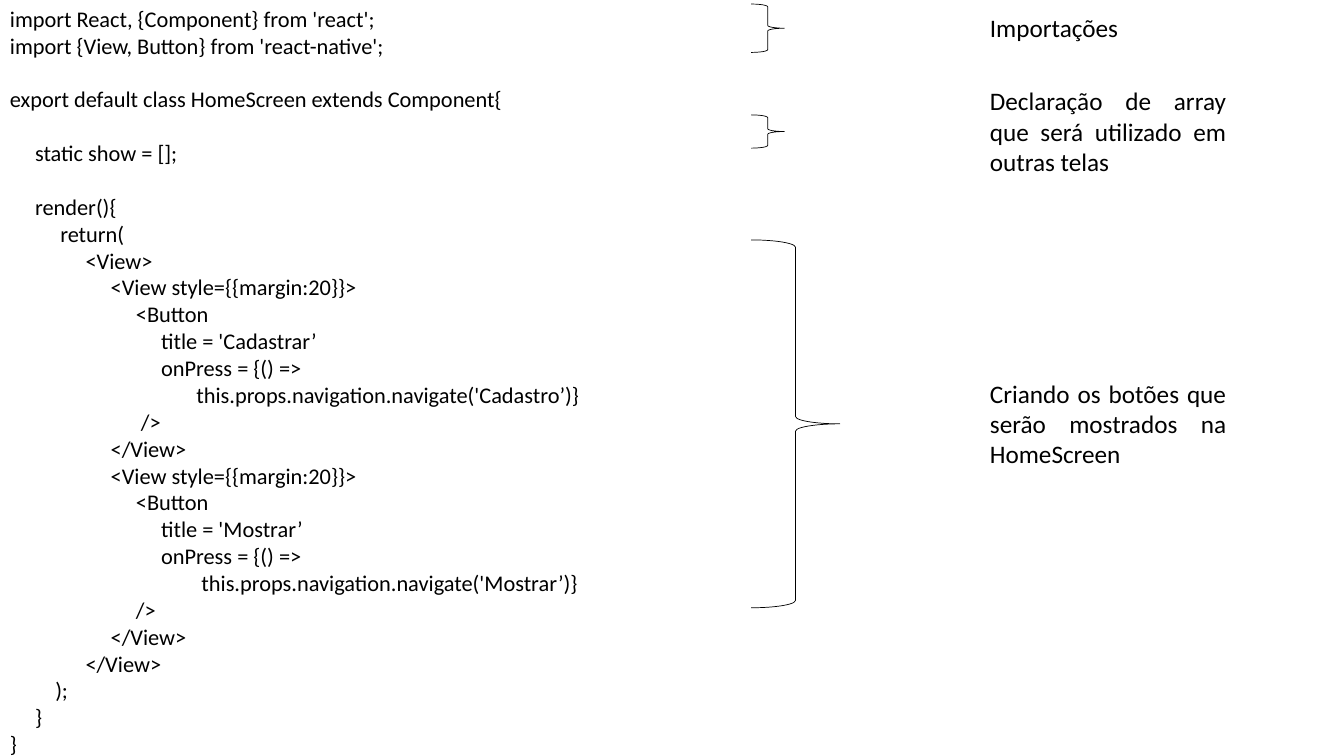
from dataclasses import dataclass

from pptx import Presentation
from pptx.dml.color import RGBColor
from pptx.enum.shapes import MSO_SHAPE
from pptx.enum.text import MSO_AUTO_SIZE, PP_ALIGN
from pptx.util import Inches, Pt


@dataclass(frozen=True)
class Theme:
    font: str = "Calibri"
    ink: RGBColor = RGBColor(0, 0, 0)
    code_size: int = 16
    note_size: int = 18
    line_width: float = 0.5
    indent: float = 0.25      # inches per code level
    blank_line: float = 19.2  # points


THEME = Theme()

# Indent level, code, whether a line's height is left above
CODE = [
    (0, "import React, {Component} from 'react';", False),
    (0, "import {View, Button} from 'react-native';", False),
    (0, "export default class HomeScreen extends Component{", True),
    (1, "static show = [];", True),
    (1, "render(){", True),
    (2, "return(", False),
    (3, "<View>", False),
    (4, "<View style={{margin:20}}>", False),
    (5, "<Button", False),
    (6, "title = 'Cadastrar’", False),
    (6, "onPress = {() =>", False),
    (7.4, "this.props.navigation.navigate('Cadastro’)}", False),
    (5.2, "/>", False),
    (4, "</View>", False),
    (4, "<View style={{margin:20}}>", False),
    (5, "<Button", False),
    (6, "title = 'Mostrar’", False),
    (6, "onPress = {() =>", False),
    (7.6, "this.props.navigation.navigate('Mostrar’)}", False),
    (5, "/>", False),
    (4, "</View>", False),
    (3, "</View>", False),
    (1.8, ");", False),
    (1, "}", False),
    (0, "}", False),
]

# Brace top, width, height; note top, height, alignment, text
NOTES = [
    ((0.04, 0.33, 0.48), (0.07, 0.4), PP_ALIGN.LEFT, "Importações"),
    ((1.14, 0.33, 0.33), (0.8, 1.01), PP_ALIGN.JUSTIFY,
     "Declaração de array que será utilizado em outras telas"),
    ((2.38, 0.88, 3.65), (3.7, 1.01), PP_ALIGN.JUSTIFY,
     "Criando os botões que serão mostrados na HomeScreen"),
]


def add_frame(slide, left, top, width, height):
    box = slide.shapes.add_textbox(*map(Inches, (left, top, width, height)))
    tf = box.text_frame
    for name, value in {"word_wrap": True,
                        "auto_size": MSO_AUTO_SIZE.SHAPE_TO_FIT_TEXT}.items():
        setattr(tf, name, value)
    return tf


def write(p, text, size):
    r = p.add_run()
    r.text = text
    for name, value in {"name": THEME.font, "size": Pt(size)}.items():
        setattr(r.font, name, value)
    r.font.color.rgb = THEME.ink


def add_code(slide, left, top, width, height):
    tf = add_frame(slide, left, top, width, height)
    for i, (level, text, gap) in enumerate(CODE):
        p = tf.add_paragraph() if i else tf.paragraphs[0]
        p.space_before = Pt(THEME.blank_line if gap else 0)
        p._p.get_or_add_pPr().set("marL", str(Inches(level * THEME.indent)))
        write(p, text, THEME.code_size)


def add_brace(slide, left, top, width, height):
    sp = slide.shapes.add_shape(MSO_SHAPE.RIGHT_BRACE,
                                *map(Inches, (left, top, width, height)))
    sp.shadow.inherit = False
    sp.fill.background()
    sp.line.color.rgb = THEME.ink
    sp.line.width = Pt(THEME.line_width)


def add_notes(slide, left, top, note_offset, note_width):
    for (brace_top, brace_width, brace_height), (y, height), align, text in NOTES:
        add_brace(slide, left, top + brace_top, brace_width, brace_height)
        tf = add_frame(slide, left + note_offset, top + y, note_width, height)
        p = tf.paragraphs[0]
        p.alignment = align
        write(p, text, THEME.note_size)


def main():
    prs = Presentation()
    prs.slide_width, prs.slide_height = Inches(13.33), Inches(7.5)
    slide = prs.slides.add_slide(prs.slide_layouts[6])
    # Source code on the left
    add_code(slide, 0, 0, 8.33, 7.64)
    # Braces with explanations on the right
    add_notes(slide, 7.45, 0, 2.27, 2.54)
    prs.save("out.pptx")


if __name__ == "__main__":
    main()
